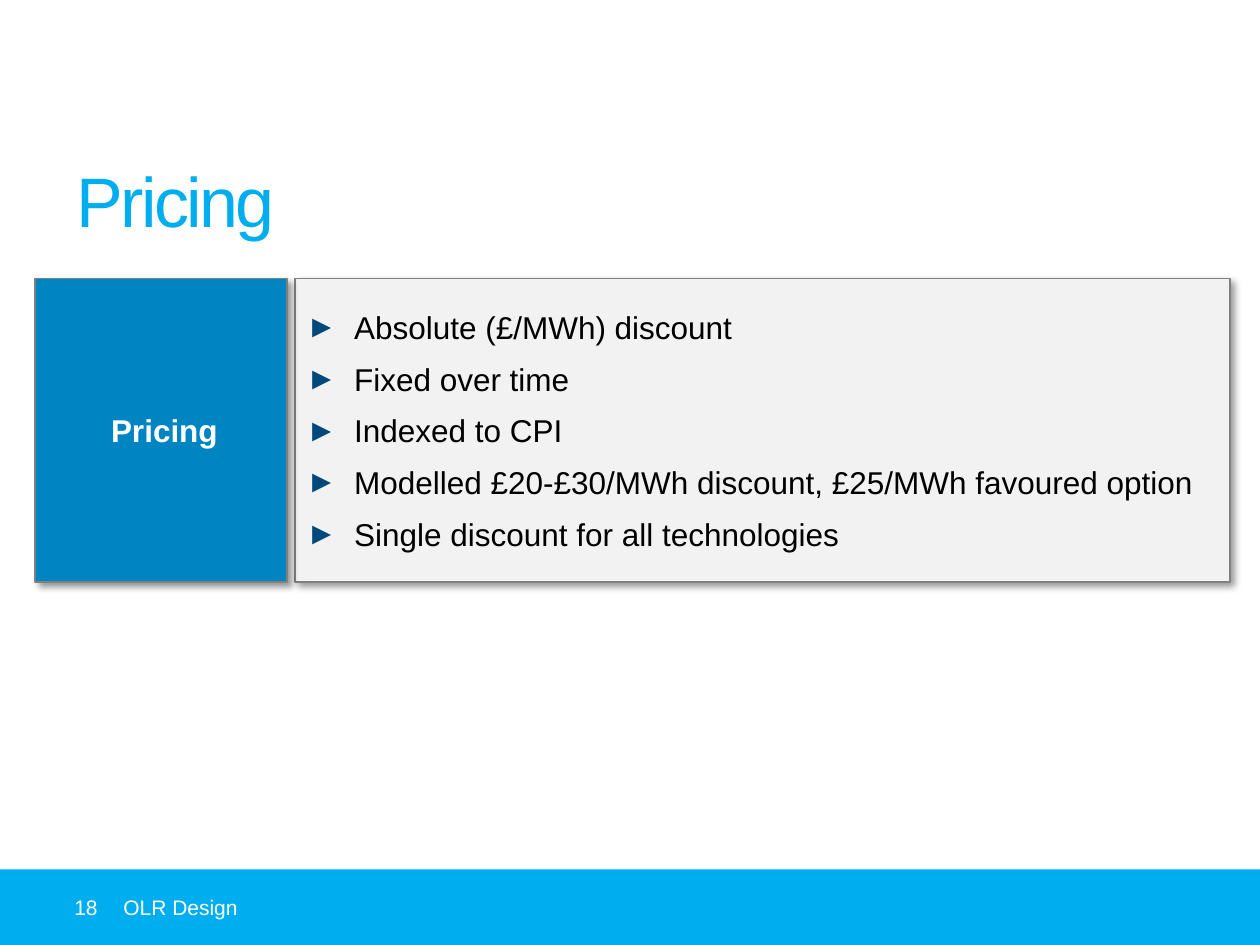
from lxml import etree
from pptx import Presentation, util as u
from pptx.dml.color import RGBColor
from pptx.enum import shapes, text
from pptx.oxml import ns

# Content
TITLE = "Pricing"
TOPIC = "Pricing"
POINTS = [
    "Absolute (£/MWh) discount",
    "Fixed over time",
    "Indexed to CPI",
    "Modelled £20-£30/MWh discount, £25/MWh favoured option",
    "Single discount for all technologies",
]
PAGE, SECTION = "18", "OLR Design"

COLOURS = {"sky": "00AEEF", "blue": "0084C2", "navy": "00487C", "panel": "F2F2F2",
           "edge": "808080", "white": "FFFFFF", "black": "000000"}
FONT = "Arial"
BULLET = "►"

# Layout, in inches
WIDTH, HEIGHT = 10, 7.5
FOOTER_H = HEIGHT * 0.08
FOOTER_TOP = HEIGHT - FOOTER_H
ROW_TOP, ROW_H = 2.21, 2.41
TOPIC_LEFT, TOPIC_W, GAP, POINTS_W = 0.28, 2, 0.06, 7.42
POINTS_LEFT = TOPIC_LEFT + TOPIC_W + GAP
PAD = 0.08


def colour(name):
    return RGBColor.from_string(COLOURS[name])


def add_child(parent, tag, **attributes):
    return etree.SubElement(parent, ns.qn(tag), attributes)


def fill_text(shape, lines, insets, size, ink, bold=False, align=text.PP_ALIGN.LEFT,
              margin=0, indent=0, before=0, bullet=None, tracking=None):
    frame = shape.text_frame
    frame_format = dict(zip(("margin_left", "margin_top", "margin_right", "margin_bottom"),
                            map(u.Inches, insets)))
    frame_format |= {"word_wrap": True, "vertical_anchor": text.MSO_ANCHOR.MIDDLE}
    for key, value in frame_format.items():
        setattr(frame, key, value)
    for i, line in enumerate(lines):
        paragraph = frame.add_paragraph() if i else frame.paragraphs[0]
        properties = paragraph._p.get_or_add_pPr()
        properties.set("marL", str(u.Inches(margin)))
        properties.set("indent", str(u.Inches(indent)))
        paragraph.alignment = align
        if i:
            paragraph.space_before = u.Pt(before)
        if bullet:
            tint = add_child(properties, "a:buClr")
            add_child(tint, "a:srgbClr", val=COLOURS[bullet])
            add_child(properties, "a:buFont", typeface=FONT)
            add_child(properties, "a:buChar", char=BULLET)
        run = paragraph.add_run()
        run.text = line
        for key, value in {"name": FONT, "size": u.Pt(size), "bold": bold}.items():
            setattr(run.font, key, value)
        run.font.color.rgb = colour(ink)
        if tracking:
            run._r.get_or_add_rPr().set("spc", str(int(tracking * 100)))


def add_box(slide, left, top, width, height, fill):
    box = slide.shapes.add_shape(shapes.MSO_SHAPE.RECTANGLE,
                                 *map(u.Inches, (left, top, width, height)))
    box.shadow.inherit = False
    box.fill.solid()
    box.fill.fore_color.rgb = colour(fill)
    box.line.fill.background()
    return box


def add_card(slide, left, width, fill):
    card = add_box(slide, left, ROW_TOP, width, ROW_H, fill)
    card.line.color.rgb = colour("edge")
    card.line.width = u.Pt(1)
    effects = card._element.spPr.find(ns.qn("a:effectLst"))
    shadow = add_child(effects, "a:outerShdw", blurRad=str(u.Pt(4)), dist=str(u.Pt(3)),
                       dir=str(45 * 60000), algn="tl", rotWithShape="0")
    tint = add_child(shadow, "a:srgbClr", val=COLOURS["black"])
    add_child(tint, "a:alpha", val="40000")
    return card


def add_label(slide, left, top, width, height):
    return slide.shapes.add_textbox(*map(u.Inches, (left, top, width, height)))


def main():
    deck = Presentation()
    deck.slide_width, deck.slide_height = u.Inches(WIDTH), u.Inches(HEIGHT)
    slide = deck.slides.add_slide(deck.slide_layouts[6])

    # Title
    title = add_label(slide, 0.61, 1.23, 8.78, 0.71)
    fill_text(title, [TITLE], (0, 0, 0, 0), 40, "sky", tracking=-1.5)

    # Footer band with page number and section
    footer = add_box(slide, 0, FOOTER_TOP, WIDTH, FOOTER_H, "sky")
    fill_text(footer, [PAGE], (0, 0, 0.1, 0), 12, "white", margin=0.59)
    section = add_label(slide, 0.98, FOOTER_TOP, 8.43, FOOTER_H)
    fill_text(section, [SECTION], (0, 0, 0, 0), 12, "white")

    # Topic and its points
    points = add_card(slide, POINTS_LEFT, POINTS_W, "panel")
    fill_text(points, POINTS, (PAD,) * 4, 18, "black", margin=0.39, indent=-0.38,
              before=8, bullet="navy")
    topic = add_card(slide, TOPIC_LEFT, TOPIC_W, "blue")
    fill_text(topic, [TOPIC], (0, PAD, PAD, PAD), 18, "white", bold=True,
              align=text.PP_ALIGN.CENTER, margin=0.13)

    deck.save("out.pptx")


if __name__ == "__main__":
    main()
